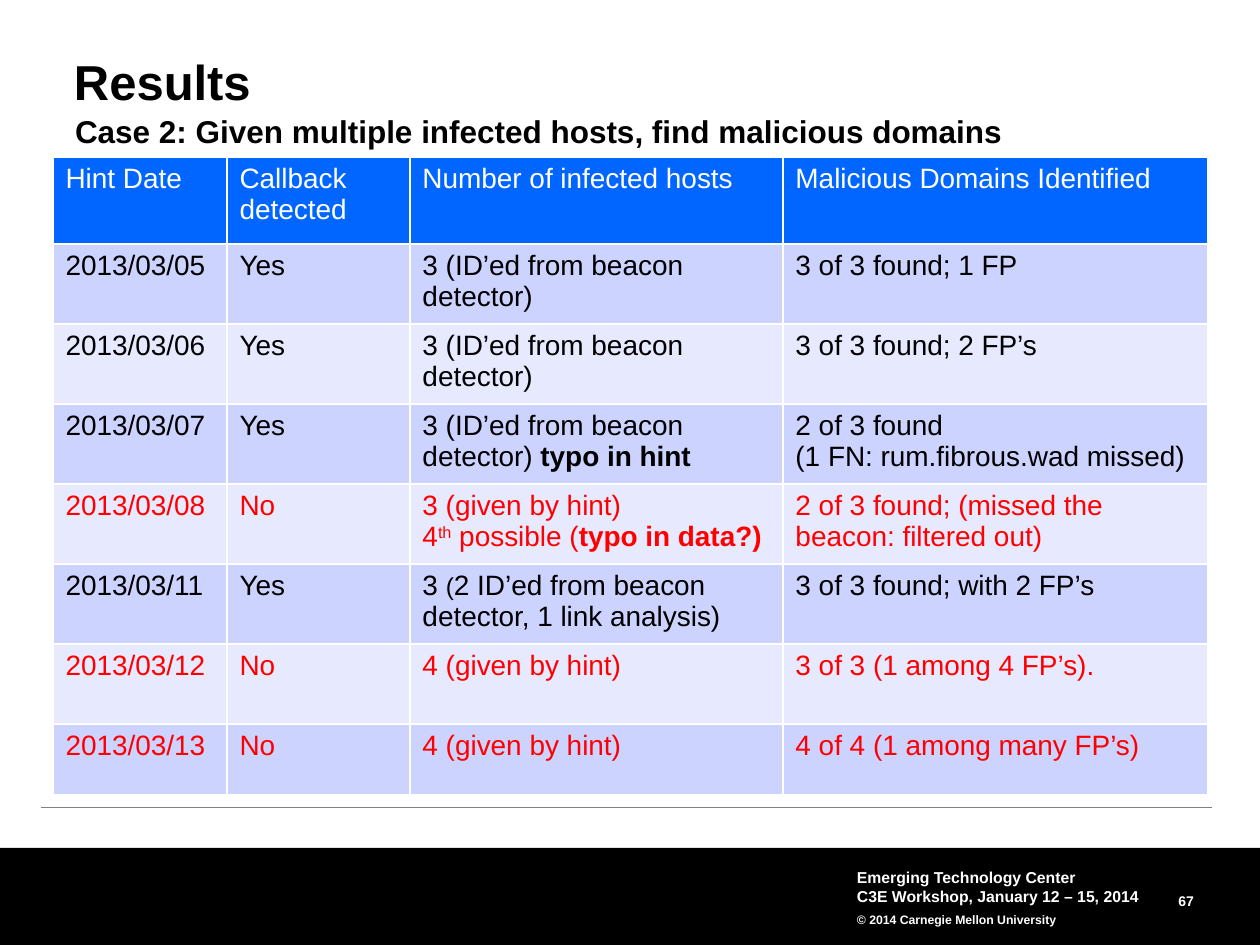
from dataclasses import dataclass

from lxml import etree
from pptx import Presentation
from pptx.dml.color import RGBColor
from pptx.enum import shapes, text
from pptx.oxml import ns
from pptx.util import Pt

PX = 914400 // 126


@dataclass(frozen=True)
class Theme:
    font: str = "Arial"
    black: str = "000000"
    white: str = "FFFFFF"
    red: str = "FF0000"
    rule: str = "808080"
    header: str = "0066FF"
    odd_row: str = "CCD3FF"
    even_row: str = "E7EAFF"
    title: int = 28
    subtitle: int = 18
    body: int = 16
    small_body: int = 14
    footer: int = 9
    page_number: int = 8
    copyright: int = 7


theme = Theme()


def add_run(paragraph, words, size, color, bold=False):
    run = paragraph.add_run()
    run.text = words
    run.font.name = theme.font
    run.font.size = Pt(size)
    run.font.bold = bold
    run.font.color.rgb = RGBColor.from_string(color)
    return run


def add_text_box(slide, box, inset, anchor=text.MSO_ANCHOR.TOP, wrap=True):
    """Return the text frame of a new box; box and inset are in px."""
    frame = slide.shapes.add_textbox(*(v * PX for v in box)).text_frame
    frame.word_wrap = wrap
    frame.vertical_anchor = anchor
    frame.margin_left = frame.margin_right = inset[0] * PX
    frame.margin_top = frame.margin_bottom = inset[1] * PX
    return frame


presentation = Presentation()
presentation.slide_width = 1260 * PX
presentation.slide_height = 945 * PX
slide = presentation.slides.add_slide(presentation.slide_layouts[6])

# Footer
rule = slide.shapes.add_connector(
    shapes.MSO_CONNECTOR.STRAIGHT, 41 * PX, 808 * PX, 1212 * PX, 808 * PX)
rule.line.color.rgb = RGBColor.from_string(theme.rule)
rule.line.width = Pt(0.5)
etree.SubElement(rule._element.spPr, ns.qn("a:effectLst"))

footer_bar = slide.shapes.add_shape(
    shapes.MSO_SHAPE.RECTANGLE, 0, 848 * PX, 1260 * PX, 97 * PX)
footer_bar.shadow.inherit = False
footer_bar.fill.solid()
footer_bar.fill.fore_color.rgb = RGBColor.from_string(theme.black)
footer_bar.line.fill.background()

frame = add_text_box(slide, (1079, 886, 115, 23), (0, 0), text.MSO_ANCHOR.MIDDLE)
paragraph = frame.paragraphs[0]
paragraph.alignment = text.PP_ALIGN.RIGHT
paragraph.line_spacing = Pt(13)
add_run(paragraph, "67", theme.page_number, theme.white, True)

frame = add_text_box(slide, (851, 861, 315, 73), (6, 6), text.MSO_ANCHOR.MIDDLE)
footer_lines = [
    ("Emerging Technology Center", theme.footer, 1.0),
    ("C3E Workshop, January 12 – 15, 2014", theme.footer, 1.0),
    ("© 2014 Carnegie Mellon University", theme.copyright, 1.5),
]
for i, (words, size, spacing) in enumerate(footer_lines):
    paragraph = frame.add_paragraph() if i else frame.paragraphs[0]
    paragraph.line_spacing = spacing
    add_run(paragraph, words, size, theme.white, True)

# Headings
frame = add_text_box(slide, (74, 58, 1124, 53), (0, 0))
frame.paragraphs[0].line_spacing = 0.9
add_run(frame.paragraphs[0], "Results", theme.title, theme.black, True)

frame = add_text_box(slide, (63, 106, 964, 50), (12, 6), wrap=False)
add_run(frame.paragraphs[0],
        "Case 2: Given multiple infected hosts, find malicious domains",
        theme.subtitle, theme.black, True)

# Results table: a cell is a list of paragraphs, a paragraph a list of
# (words, style) runs; a plain string stands for one plain run.
BEACON = "3 (ID’ed from beacon detector)"
HINT = "4 (given by hint)"
rows = [
    ("Hint Date", "Callback detected", "Number of infected hosts",
     "Malicious Domains Identified"),
    ("2013/03/05", "Yes", BEACON, "3 of 3 found; 1 FP"),
    ("2013/03/06", "Yes", BEACON, "3 of 3 found; 2 FP’s"),
    ("2013/03/07", "Yes",
     [[(BEACON + " ", ""), ("typo in hint", "bold")]],
     [[("2 of 3 found", "")], [("(1 FN: rum.fibrous.wad missed)", "")]]),
    ("2013/03/08", "No",
     [[("3 (given by hint)", "")],
      [("4", ""), ("th", "super"), (" possible (", ""),
       ("typo in data?)", "bold")]],
     "2 of 3 found; (missed the beacon: filtered out)"),
    ("2013/03/11", "Yes",
     [[("3 ", ""), ("(", "small"),
       ("2 ID’ed from beacon detector, 1 link analysis)", "")]],
     "3 of 3 found; with 2 FP’s"),
    ("2013/03/12", "No", HINT, "3 of 3 (1 among 4 FP’s)."),
    ("2013/03/13", "No", HINT, "4 of 4 (1 among many FP’s)"),
]
column_widths = [174, 183, 373, 425]
row_heights = [87] + [80] * 6 + [71]

table = slide.shapes.add_table(
    len(rows), len(column_widths), 53 * PX, 157 * PX,
    sum(column_widths) * PX, sum(row_heights) * PX).table
for column, width in zip(table.columns, column_widths):
    column.width = width * PX
for row, height in zip(table.rows, row_heights):
    row.height = height * PX

for r, row in enumerate(rows):
    if r == 0:
        fill, color = theme.header, theme.white
    else:
        fill = theme.odd_row if r % 2 else theme.even_row
        color = theme.red if row[1] == "No" else theme.black
    for c, content in enumerate(row):
        cell = table.cell(r, c)
        paragraphs = [[(content, "")]] if isinstance(content, str) else content
        for i, runs in enumerate(paragraphs):
            frame = cell.text_frame
            paragraph = frame.add_paragraph() if i else frame.paragraphs[0]
            paragraph.alignment = text.PP_ALIGN.LEFT
            for words, style in runs:
                size = theme.small_body if style == "small" else theme.body
                run = add_run(paragraph, words, size, color, style == "bold")
                if style == "super":
                    run.font._element.set("baseline", "30000")
        properties = cell._tc.get_or_add_tcPr()
        for side in ("lnL", "lnR", "lnT", "lnB"):
            border = etree.SubElement(properties, ns.qn(f"a:{side}"), w=str(Pt(1)))
            solid = etree.SubElement(border, ns.qn("a:solidFill"))
            etree.SubElement(solid, ns.qn("a:srgbClr"), val=theme.white)
        cell.fill.solid()
        cell.fill.fore_color.rgb = RGBColor.from_string(fill)

presentation.save("out.pptx")
